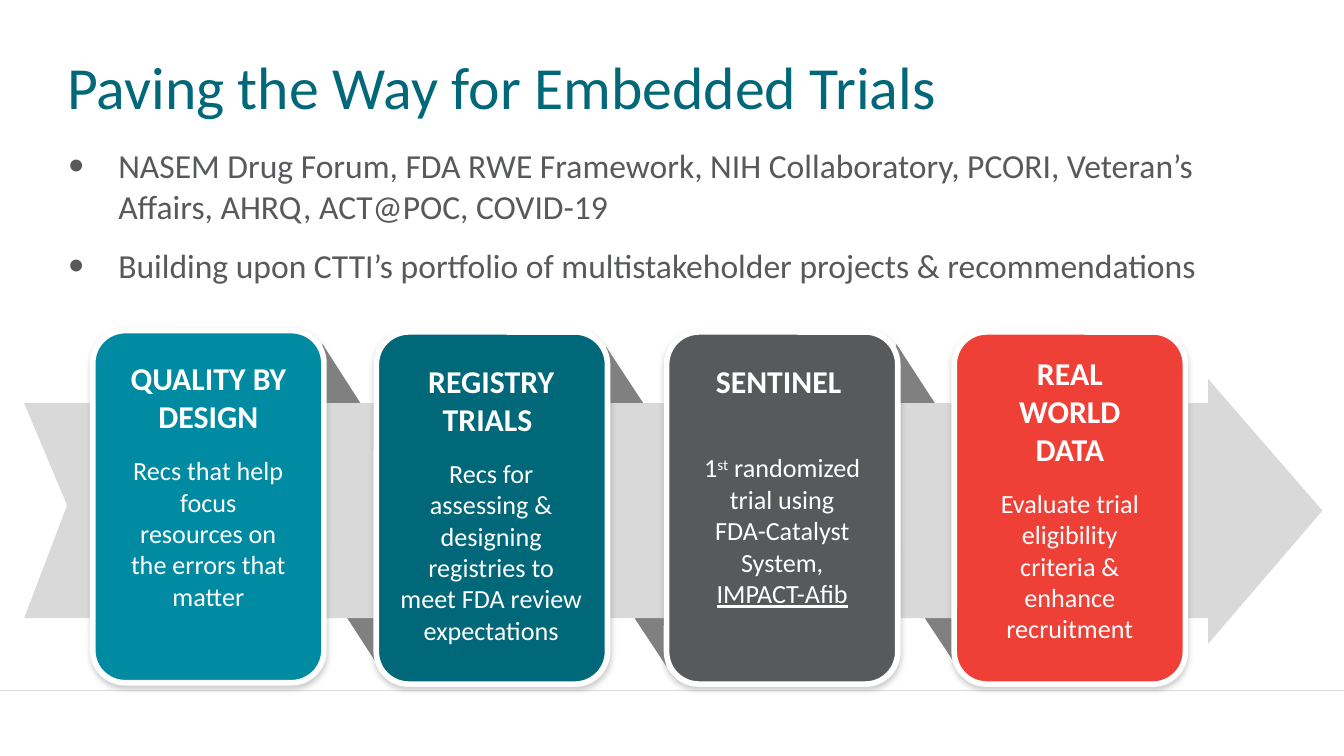
from dataclasses import dataclass

from lxml import etree
from pptx import Presentation
from pptx import util as u
from pptx.dml.color import RGBColor
from pptx.enum import shapes, text
from pptx.oxml import ns

PX = 9144  # EMU per px, 100 px to the inch


@dataclass(frozen=True)
class Theme:
    font: str = "Calibri"
    teal: str = "008BA2"
    deep_teal: str = "006879"
    gray: str = "58595B"
    red: str = "EE4036"
    white: str = "FFFFFF"
    arrow: str = "D9D9D9"
    fold: str = "808080"
    title_size: int = 32
    body_size: int = 18
    heading_size: int = 17
    detail_size: int = 14


THEME = Theme()


@dataclass(frozen=True)
class Span:
    text: str
    underline: bool = False
    baseline: int = 0


@dataclass(frozen=True)
class Card:
    left: int
    top: int
    color: str
    heading: str
    details: tuple[Span, ...]
    label: tuple[int, int, int, int]
    gap: float = 10.5


@dataclass(frozen=True)
class Fold:
    left: int
    top: int
    height: int


CARD_WIDTH, CARD_HEIGHT = 172, 262
CARDS = (
    Card(69, 246, THEME.teal, "QUALITY BY DESIGN",
         (Span("Recs that help focus resources on the errors that matter"),),
         (69, 254, 172, 217)),
    Card(280, 247, THEME.deep_teal, "REGISTRY TRIALS ",
         (Span("Recs for assessing & designing registries to meet FDA review expectations"),),
         (270, 256, 191, 240)),
    Card(496, 247, THEME.gray, "SENTINEL ",
         (Span("1"), Span("st", baseline=30000),
          Span(" randomized trial using FDA-Catalyst System, "),
          Span("IMPACT-Afib", underline=True)),
         (496, 256, 172, 213), gap=28),
    Card(710, 247, THEME.red, "REAL WORLD DATA",
         (Span("Evaluate trial eligibility criteria & enhance recruitment"),),
         (710, 250, 172, 279)),
)
FOLDS = (Fold(655, 256, 240), Fold(228, 256, 245), Fold(439, 258, 238))
ARROW = ((18, 300), (899, 300), (899, 282), (984, 380), (899, 479),
         (899, 460), (18, 460), (50, 376))
BULLETS = (
    ("NASEM Drug Forum, FDA RWE Framework, NIH Collaboratory, PCORI, Veteran’s "
     "Affairs, AHRQ, ACT@POC, COVID-19", 10.5),
    ("Building upon CTTI’s portfolio of multistakeholder projects & recommendations", 6),
)


def color(value: str) -> RGBColor:
    return RGBColor.from_string(value)


def add_element(parent, tag: str, **attributes: str):
    element = etree.SubElement(parent, ns.qn(tag))
    for name, value in attributes.items():
        element.set(name, value)
    return element


def write(para, words: str, *, size: float, ink: str, bold: bool = False,
          underline: bool = False, baseline: int = 0) -> None:
    span = para.add_run()
    span.text = words
    font = span.font
    font.name, font.size, font.bold = THEME.font, u.Pt(size), bold
    font.color.rgb = color(ink)
    if underline:
        font.underline = True
    if baseline:
        span._r.get_or_add_rPr().set("baseline", str(baseline))


def add_text_box(page, left: int, top: int, width: int, height: int,
                 inset_x: int = 0, inset_y: int = 0):
    box = page.shapes.add_textbox(left * PX, top * PX, width * PX, height * PX)
    frame = box.text_frame
    frame.word_wrap = True
    frame.margin_left = frame.margin_right = inset_x * PX
    frame.margin_top = frame.margin_bottom = inset_y * PX
    return frame


def add_bullet(para) -> None:
    properties = para._p.get_or_add_pPr()
    properties.set("marL", str(38 * PX))
    properties.set("indent", str(-37 * PX))
    add_element(properties, "a:buSzPct", val="130000")
    add_element(properties, "a:buFont", typeface="Arial")
    add_element(properties, "a:buChar", char="•")


def add_outline(page, points, fill: str) -> None:
    builder = page.shapes.build_freeform(*points[0], scale=float(PX))
    builder.add_line_segments(points[1:], close=True)
    shape = builder.convert_to_shape()
    shape.shadow.inherit = False
    shape.fill.solid()
    shape.fill.fore_color.rgb = color(fill)
    shape.line.fill.background()


def add_fold(page, fold: Fold) -> None:
    corners = ((12, 0), (62, 0.32), (57, 1), (0, 0.64))
    points = [(fold.left + x, fold.top + round(y * fold.height)) for x, y in corners]
    add_outline(page, points, THEME.fold)


def add_card(page, card: Card) -> None:
    shape = page.shapes.add_shape(
        shapes.MSO_SHAPE.ROUNDED_RECTANGLE, card.left * PX, card.top * PX,
        CARD_WIDTH * PX, CARD_HEIGHT * PX)
    shape.adjustments[0] = 0.14
    shape.fill.solid()
    shape.fill.fore_color.rgb = color(card.color)
    shape.line.color.rgb = color(THEME.white)
    shape.line.width = u.Pt(3)
    # Soft shadow straight below the card
    shape.shadow.inherit = False
    effects = shape._element.spPr.find(ns.qn("a:effectLst"))
    shadow = add_element(effects, "a:outerShdw", blurRad=str(u.Pt(3.1)),
                         dist=str(u.Pt(1.6)), dir="5400000", rotWithShape="0")
    tint = add_element(shadow, "a:srgbClr", val=THEME.fold)
    add_element(tint, "a:alpha", val="38000")


def add_label(page, card: Card) -> None:
    frame = add_text_box(page, *card.label, inset_x=27, inset_y=13)
    frame.auto_size = text.MSO_AUTO_SIZE.SHAPE_TO_FIT_TEXT
    heading, detail = frame.paragraphs[0], frame.add_paragraph()
    heading.alignment = detail.alignment = text.PP_ALIGN.CENTER
    heading.space_after = u.Pt(card.gap)
    write(heading, card.heading, size=THEME.heading_size, ink=THEME.white, bold=True)
    for span in card.details:
        write(detail, span.text, size=THEME.detail_size, ink=THEME.white,
              underline=span.underline, baseline=span.baseline)


def main() -> None:
    # Widescreen page, 16 to 9
    deck = Presentation()
    deck.slide_width = 1000 * PX
    deck.slide_height = deck.slide_width * 9 // 16
    page = deck.slides.add_slide(deck.slide_layouts[6])

    # Footer rule
    rule = page.shapes.add_connector(
        shapes.MSO_CONNECTOR.STRAIGHT, 0, 514 * PX, 1000 * PX, 514 * PX)
    rule.line.color.rgb = color(THEME.arrow)
    rule.line.width = u.Pt(0.75)
    add_element(rule._element.spPr, "a:effectLst")

    # Title
    title = add_text_box(page, 50, 32, 893, 63)
    title.vertical_anchor = text.MSO_ANCHOR.MIDDLE
    write(title.paragraphs[0], "Paving the Way for Embedded Trials",
          size=THEME.title_size, ink=THEME.deep_teal)

    # Bullets
    body = add_text_box(page, 50, 108, 862, 109)
    for index, (words, gap) in enumerate(BULLETS):
        para = body.add_paragraph() if index else body.paragraphs[0]
        add_bullet(para)
        para.space_after = u.Pt(gap)
        write(para, words, size=THEME.body_size, ink=THEME.gray)

    # Arrow ribbon with folds behind it
    for fold in FOLDS:
        add_fold(page, fold)
    add_outline(page, ARROW, THEME.arrow)

    # Cards and their labels
    for card in CARDS:
        add_card(page, card)
    for card in CARDS:
        add_label(page, card)

    deck.save("out.pptx")


if __name__ == "__main__":
    main()
